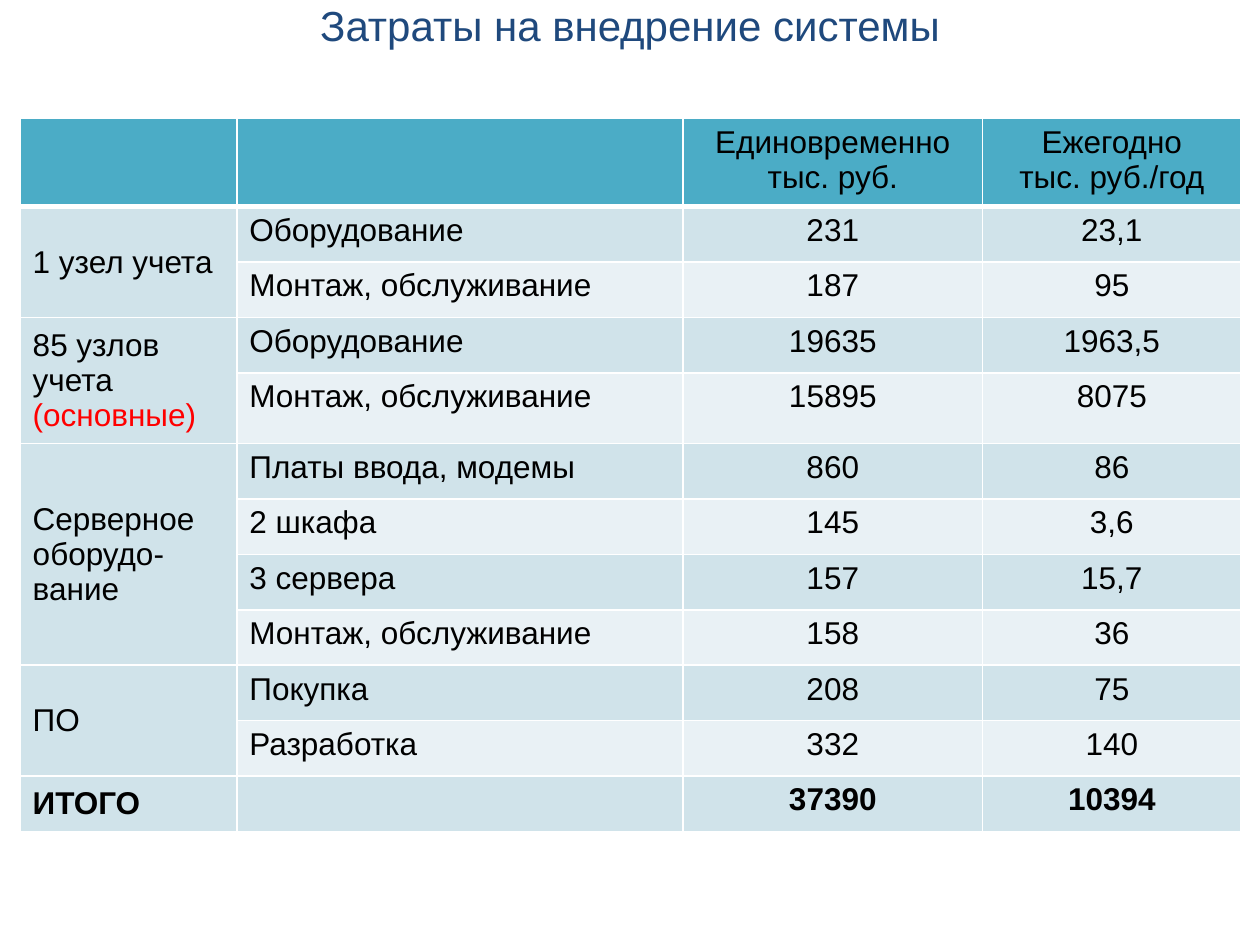
from dataclasses import dataclass

from lxml.etree import SubElement
from pptx import Presentation
from pptx.dml.color import RGBColor
from pptx.enum.text import MSO_ANCHOR as Anchor, PP_ALIGN as Align
from pptx.oxml.ns import qn
from pptx.util import Inches, Pt

WIDE, HIGH = 10, 7.5
FONT = "Arial"
BLACK, WHITE, RED, NAVY = "000000", "FFFFFF", "FF0000", "1F497D"
TEAL, DARK, LIGHT = "4BACC6", "D0E3EA", "E9F1F5"
COLS = [1.72, 3.54, 2.38, 2.05]
HEAD_H, ROW_H = 0.7, 0.44
HEAD = ["", "", "Единовременно\nтыс. руб.", "Ежегодно\nтыс. руб./год"]


@dataclass
class Group:
    name: str
    rows: list[tuple[str, str, str]]
    note: str = ""
    bold: bool = False


GROUPS = [
    Group("1 узел учета", [
        ("Оборудование", "231", "23,1"),
        ("Монтаж, обслуживание", "187", "95"),
    ]),
    Group("85 узлов учета ", [
        ("Оборудование", "19635", "1963,5"),
        ("Монтаж, обслуживание", "15895", "8075"),
    ], note="(основные)"),
    Group("Серверное оборудо-вание", [
        ("Платы ввода, модемы", "860", "86"),
        ("2 шкафа", "145", "3,6"),
        ("3 сервера", "157", "15,7"),
        ("Монтаж, обслуживание", "158", "36"),
    ]),
    Group("ПО", [
        ("Покупка", "208", "75"),
        ("Разработка", "332", "140"),
    ]),
    Group("ИТОГО", [("", "37390", "10394")], bold=True),
]


def paint(target, color: str) -> None:
    """Give a fill or a font a solid colour."""
    if hasattr(target, "solid"):
        target.solid()
        target.fore_color.rgb = RGBColor.from_string(color)
    else:
        target.color.rgb = RGBColor.from_string(color)


def style(frame, size: int, color: str, align: Align, bold: bool = False) -> None:
    for para in frame.paragraphs:
        para.alignment = align
        para.font.size = Pt(size)
        for run in para.runs:
            run.font.name, run.font.size, run.font.bold = FONT, Pt(size), bold
            paint(run.font, color)


def edge(cell, base: float) -> None:
    """Draw white borders, with the bottom one base points wide."""
    props = cell._tc.get_or_add_tcPr()
    for side, width in (("L", 1), ("R", 1), ("T", 1), ("B", base)):
        line = SubElement(props, qn(f"a:ln{side}"), w=str(Pt(width)))
        fill = SubElement(line, qn("a:solidFill"))
        SubElement(fill, qn("a:srgbClr"), val=WHITE)


def write(cell, text: str, color: str, col: int, bold: bool = False, base: float = 1) -> None:
    edge(cell, base)
    paint(cell.fill, color)
    cell.text_frame.text = text
    style(cell.text_frame, 18, BLACK, Align.CENTER if col > 1 else Align.LEFT, bold)


def draw_title(slide, text: str) -> None:
    box = slide.shapes.add_textbox(0, 0, Inches(WIDE), Inches(0.39))
    frame = box.text_frame
    frame.word_wrap = True
    frame.vertical_anchor = Anchor.MIDDLE
    frame.text = text
    style(frame, 24, NAVY, Align.CENTER)


def draw_group(table, group: Group, top: int) -> None:
    last = top + len(group.rows) - 1
    for row, texts in enumerate(group.rows, top):
        color = DARK if row % 2 else LIGHT
        write(table.cell(row, 0), "", DARK, 0)
        for col, text in enumerate(texts, 1):
            write(table.cell(row, col), text, color, col, group.bold)
    name = table.cell(top, 0)
    if last > top:
        name.merge(table.cell(last, 0))
    name.vertical_anchor = Anchor.MIDDLE
    para = name.text_frame.paragraphs[0]
    for text in filter(None, (group.name, group.note)):
        para.add_run().text = text
    style(name.text_frame, 18, BLACK, Align.LEFT, group.bold)
    if group.note:
        paint(para.runs[-1].font, RED)


def draw_table(slide) -> None:
    count = sum(len(group.rows) for group in GROUPS)
    size = (sum(COLS), HEAD_H + count * ROW_H)
    table = slide.shapes.add_table(
        count + 1, len(COLS), *map(Inches, (0.16, 0.94, *size))).table
    table.first_row = table.horz_banding = False
    for col, width in enumerate(COLS):
        table.columns[col].width = Inches(width)
        write(table.cell(0, col), HEAD[col], TEAL, col, base=3)
    for row in range(count + 1):
        table.rows[row].height = Inches(ROW_H if row else HEAD_H)
    top = 1
    for group in GROUPS:
        draw_group(table, group, top)
        top += len(group.rows)


def main() -> None:
    deck = Presentation()
    deck.slide_width, deck.slide_height = Inches(WIDE), Inches(HIGH)
    slide = deck.slides.add_slide(deck.slide_layouts[6])
    draw_title(slide, "Затраты на внедрение системы")
    draw_table(slide)
    deck.save("out.pptx")


if __name__ == "__main__":
    main()
